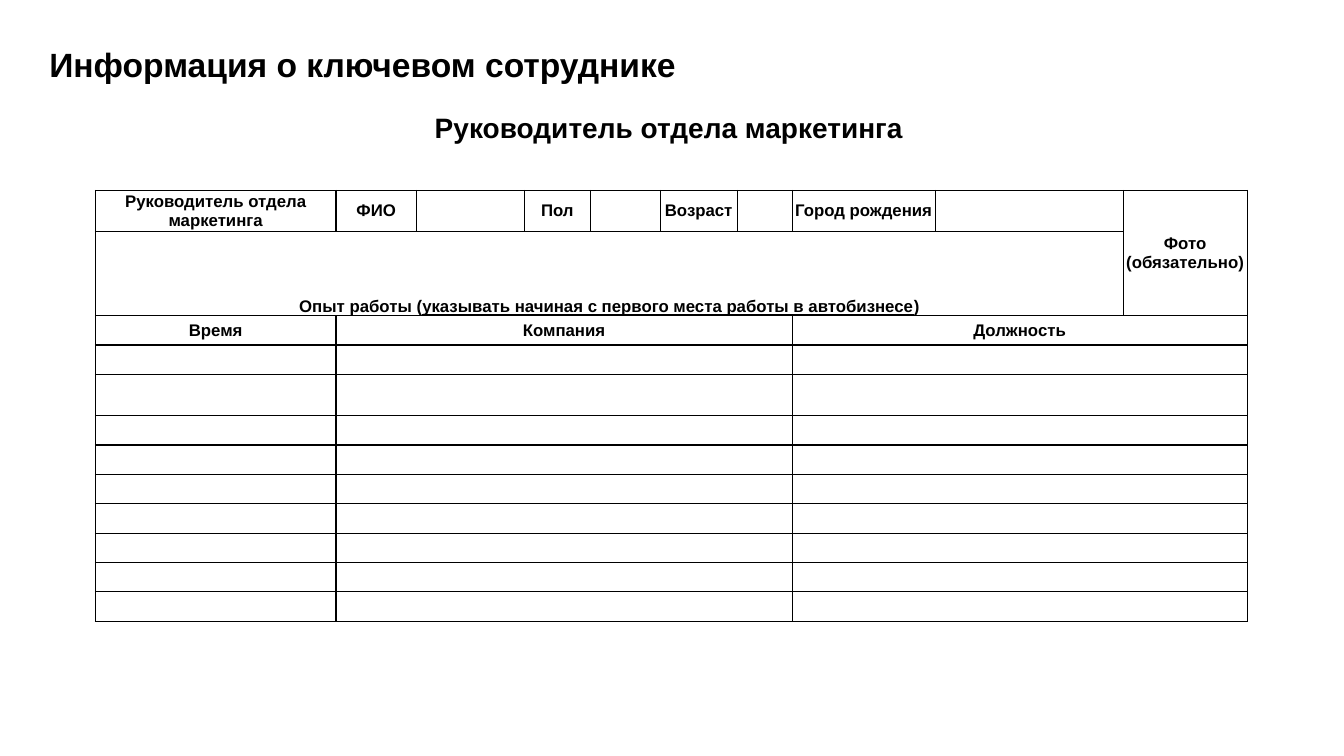
from dataclasses import dataclass

from lxml import etree
from pptx import Presentation
from pptx.dml.color import RGBColor
from pptx.enum.text import MSO_ANCHOR, MSO_AUTO_SIZE, PP_ALIGN
from pptx.oxml.ns import qn
from pptx.util import Pt

TOP, MIDDLE, BOTTOM = MSO_ANCHOR.TOP, MSO_ANCHOR.MIDDLE, MSO_ANCHOR.BOTTOM
LEFT, CENTER = PP_ALIGN.LEFT, PP_ALIGN.CENTER
NO_AUTOFIT = MSO_AUTO_SIZE.NONE
TITLE_ONLY = 5


@dataclass(frozen=True)
class Theme:
    font: str = "Arial"
    ink: str = "000000"
    title: int = 24
    subtitle: int = 20
    cell: int = 12
    border: int = 1


THEME = Theme()

COLUMNS = [171.8, 57.5, 77.1, 47.1, 50, 55, 39.3, 102.1, 134.3, 88.6]
ROWS = [29.5, 60, 21, 21, 29.5] + [21] * 7
PERSON_FIELDS = {
    0: "Руководитель отдела маркетинга",
    1: "ФИО",
    3: "Пол",
    5: "Возраст",
    7: "Город рождения",
}
HISTORY_FIELDS = {0: "Время", 1: "Компания", 7: "Должность"}
COMPANY, POSITION, PHOTO = 1, 7, 9
HISTORY_ROW = 2


def set_attributes(target, values):
    for name, value in values.items():
        setattr(target, name, value)


def format_font(font, size, underline=None):
    set_attributes(font, {"name": THEME.font, "size": Pt(size), "bold": True,
                          "underline": underline})
    font.color.rgb = RGBColor.from_string(THEME.ink)


def write(tf, paragraphs, size, align):
    """Fill a text frame; each paragraph is a list of (text, underline) runs."""
    for i, runs in enumerate(paragraphs):
        p = tf.paragraphs[0] if i == 0 else tf.add_paragraph()
        p.alignment = align
        for text, underline in runs:
            r = p.add_run()
            r.text = text
            format_font(r.font, size, underline)


def add_title(s, text):
    sp = s.shapes.title
    set_attributes(sp, {"left": Pt(28), "top": Pt(28),
                        "width": Pt(828), "height": Pt(57)})
    tf = sp.text_frame
    set_attributes(tf, {"vertical_anchor": TOP, "auto_size": NO_AUTOFIT})
    write(tf, [[(text, None)]], THEME.title, LEFT)


def add_subtitle(s, text):
    sp = s.shapes.add_textbox(Pt(35.5), Pt(75.5), Pt(890), Pt(31.5))
    tf = sp.text_frame
    set_attributes(tf, {"word_wrap": True, "vertical_anchor": MIDDLE})
    write(tf, [[(text, None)]], THEME.subtitle, CENTER)


def set_borders(cell):
    tc_pr = cell._tc.get_or_add_tcPr()
    for i, side in enumerate(("a:lnL", "a:lnR", "a:lnT", "a:lnB")):
        ln = etree.Element(qn(side), w=str(Pt(THEME.border)))
        fill = etree.SubElement(ln, qn("a:solidFill"))
        etree.SubElement(fill, qn("a:srgbClr"), val=THEME.ink)
        tc_pr.insert(i, ln)


def add_grid(s, left, top):
    """Add an empty bordered table with the form's rows and columns."""
    table = s.shapes.add_table(len(ROWS), len(COLUMNS), Pt(left), Pt(top),
                               Pt(sum(COLUMNS)), Pt(sum(ROWS))).table
    set_attributes(table, {"first_row": False, "horz_banding": False})
    for column, width in zip(table.columns, COLUMNS):
        column.width = Pt(width)
    for row, height in zip(table.rows, ROWS):
        row.height = Pt(height)
    for cell in table.iter_cells():
        set_attributes(cell, {"margin_left": 0, "margin_right": 0, "margin_top": 0,
                              "margin_bottom": 0, "vertical_anchor": MIDDLE})
        cell.fill.background()
        set_borders(cell)
        format_font(cell.text_frame.paragraphs[0].font, THEME.cell)
    return table


def merge_cells(table):
    table.cell(0, PHOTO).merge(table.cell(1, PHOTO))
    table.cell(1, 0).merge(table.cell(1, PHOTO - 1))
    for row in range(HISTORY_ROW, len(ROWS)):
        table.cell(row, COMPANY).merge(table.cell(row, POSITION - 1))
        table.cell(row, POSITION).merge(table.cell(row, PHOTO))


def fill_cell(cell, *paragraphs):
    write(cell.text_frame, paragraphs, THEME.cell, CENTER)


def add_employee_form(s):
    table = add_grid(s, 68.2, 136)
    merge_cells(table)
    for row, fields in ((0, PERSON_FIELDS), (HISTORY_ROW, HISTORY_FIELDS)):
        for col, text in fields.items():
            fill_cell(table.cell(row, col), [(text, None)])
    fill_cell(table.cell(0, PHOTO), [("Фото", None)], [("(обязательно)", None)])
    experience = table.cell(1, 0)
    experience.vertical_anchor = BOTTOM
    fill_cell(experience, [
        ("Опыт работы (", None),
        ("указывать начиная с первого места работы в автобизнесе", True),
        (")", None),
    ])


def main():
    prs = Presentation()
    set_attributes(prs, {"slide_width": Pt(960), "slide_height": Pt(540)})
    s = prs.slides.add_slide(prs.slide_layouts[TITLE_ONLY])
    add_title(s, "Информация о ключевом сотруднике")
    add_subtitle(s, "Руководитель отдела маркетинга ")
    add_employee_form(s)
    prs.save("out.pptx")


if __name__ == "__main__":
    main()
